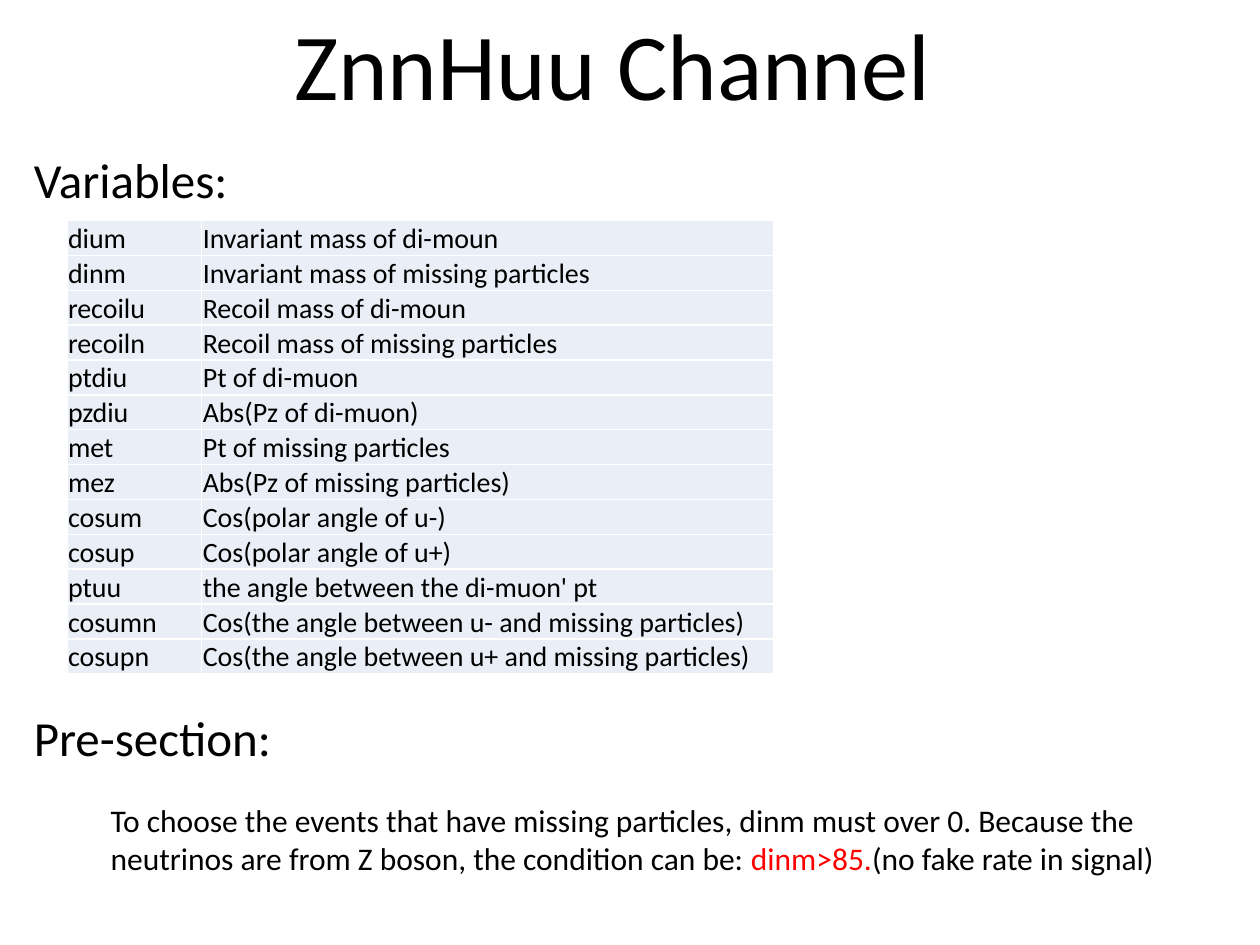
from dataclasses import dataclass

from lxml.etree import SubElement
from pptx import Presentation
from pptx.dml.color import RGBColor as RGB
from pptx.enum.text import MSO_ANCHOR as Anchor, MSO_AUTO_SIZE as Fit, PP_ALIGN as Align
from pptx.oxml.ns import qn
from pptx.util import Inches, Pt


@dataclass(frozen=True)
class Theme:
    font: str = "Calibri"
    ink: str = "000000"
    red: str = "FF0000"
    cell: str = "EAEFF7"
    rule: str = "FFFFFF"
    title: int = 54
    head: int = 28
    body: int = 18
    grid: int = 16


THEME = Theme()

TITLE = "ZnnHuu Channel"
HEADS = [("Variables:", 1.14), ("Pre-section:", 5.57)]
ROWS = [
    ("dium", "Invariant mass of di-moun"),
    ("dinm", "Invariant mass of missing particles"),
    ("recoilu", "Recoil mass of di-moun"),
    ("recoiln", "Recoil mass of missing particles"),
    ("ptdiu", "Pt of di-muon"),
    ("pzdiu", "Abs(Pz of di-muon)"),
    ("met", "Pt of missing particles"),
    ("mez", "Abs(Pz of missing particles)"),
    ("cosum", "Cos(polar angle of u-)"),
    ("cosup", "Cos(polar angle of u+)"),
    ("ptuu", "the angle between the di-muon' pt"),
    ("cosumn", "Cos(the angle between u- and missing particles)"),
    ("cosupn", "Cos(the angle between u+ and missing particles)"),
]
COLS = [1.07, 4.54]
NOTE = [
    ("To choose the events that have missing particles, dinm must over 0. "
     "Because the neutrinos are from Z boson, the condition can be: ", THEME.ink),
    ("dinm>85.", THEME.red),
    ("(no fake rate in signal)", THEME.ink),
]


def style(para, size):
    para.font.name = THEME.font
    para.font.size = Pt(size)
    para.font.color.rgb = RGB.from_string(THEME.ink)


def add_title(slide):
    shape = slide.shapes.title
    shape.left, shape.top = Inches(2.21), Inches(0)
    shape.width, shape.height = Inches(5.3), Inches(1.01)
    frame = shape.text_frame
    frame.text = TITLE
    frame.word_wrap = False
    frame.auto_size = Fit.SHAPE_TO_FIT_TEXT
    frame.vertical_anchor = Anchor.TOP
    para = frame.paragraphs[0]
    para.alignment = Align.CENTER
    style(para, THEME.title)


def add_text(slide, area, runs, size):
    box = slide.shapes.add_textbox(*map(Inches, area))
    frame = box.text_frame
    frame.word_wrap = True
    frame.auto_size = Fit.SHAPE_TO_FIT_TEXT
    para = frame.paragraphs[0]
    style(para, size)
    for text, color in runs:
        run = para.add_run()
        run.text = text
        run.font.name = THEME.font
        run.font.size = Pt(size)
        run.font.color.rgb = RGB.from_string(color)


def add_edges(cell):
    props = cell._tc.get_or_add_tcPr()
    for side in ("lnL", "lnR", "lnT", "lnB"):
        line = SubElement(props, qn(f"a:{side}"), w=str(Pt(1)))
        fill = SubElement(line, qn("a:solidFill"))
        SubElement(fill, qn("a:srgbClr"), val=THEME.rule)


def add_grid(slide):
    area = map(Inches, (0.53, 1.75, sum(COLS), 3.58))
    table = slide.shapes.add_table(len(ROWS), len(COLS), *area).table
    table.first_row = table.horz_banding = False
    for col, width in zip(table.columns, COLS):
        col.width = Inches(width)
    for row, texts in zip(table.rows, ROWS):
        for cell, text in zip(row.cells, texts):
            cell.text = text
            cell.margin_left = cell.margin_right = cell.margin_top = Inches(0.01)
            cell.margin_bottom = 0
            cell.vertical_anchor = Anchor.MIDDLE
            style(cell.text_frame.paragraphs[0], THEME.grid)
            add_edges(cell)
            cell.fill.solid()
            cell.fill.fore_color.rgb = RGB.from_string(THEME.cell)


def main():
    deck = Presentation()
    deck.slide_width, deck.slide_height = Inches(10), Inches(7.5)
    slide = deck.slides.add_slide(deck.slide_layouts[5])
    add_title(slide)
    add_grid(slide)
    for text, top in HEADS:
        add_text(slide, (0.17, top, 4.55, 0.57), [(text, THEME.ink)], THEME.head)
    add_text(slide, (0.78, 6.31, 8.53, 0.71), NOTE, THEME.body)
    deck.save("out.pptx")


if __name__ == "__main__":
    main()
